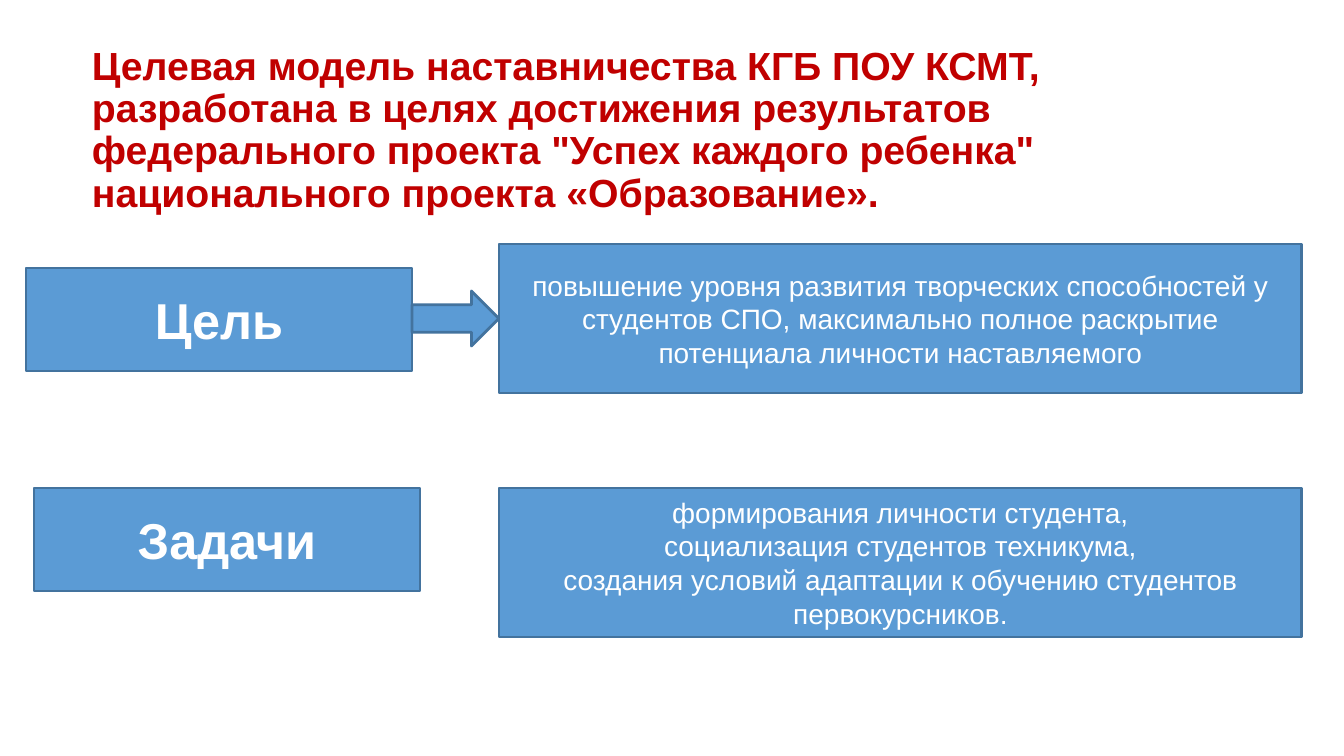
from pptx import Presentation
from pptx.dml.color import RGBColor
from pptx.enum.shapes import MSO_SHAPE
from pptx.enum.text import MSO_ANCHOR, PP_ALIGN
from pptx.util import Emu, Pt

RECT, ARROW = MSO_SHAPE.RECTANGLE, MSO_SHAPE.RIGHT_ARROW
MIDDLE = MSO_ANCHOR.MIDDLE
LEFT, CENTER = PP_ALIGN.LEFT, PP_ALIGN.CENTER
FONT = "Arial"
BLUE, EDGE, WHITE, RED = "5B9BD5", "43739E", "FFFFFF", "C00000"

TITLE = (
    'Целевая модель наставничества КГБ ПОУ КСМТ, разработана в целях '
    'достижения результатов федерального проекта "Успех каждого ребенка" '
    'национального проекта «Образование».'
)
GOAL = [
    "повышение уровня развития творческих способностей у студентов СПО, "
    "максимально полное раскрытие потенциала личности наставляемого",
]
TASKS = [
    "формирования личности студента,",
    "социализация студентов техникума,",
    "создания условий адаптации к обучению студентов первокурсников.",
]


def px(n):
    return Emu(round(n * 914400 / 100.8))


def color(value):
    return RGBColor.from_string(value)


def write(sp, lines, size, ink, bold=False, align=CENTER):
    tf = sp.text_frame
    tf.word_wrap = True
    tf.vertical_anchor = MIDDLE
    for i, line in enumerate(lines):
        p = tf.paragraphs[0] if i == 0 else tf.add_paragraph()
        p.text = line
        p.alignment = align
        p.font.name = FONT
        p.font.size = Pt(size)
        p.font.bold = bold
        p.font.color.rgb = color(ink)


def add_block(s, kind, x, y, w, h):
    sp = s.shapes.add_shape(kind, px(x), px(y), px(w), px(h))
    sp.shadow.inherit = False
    sp.fill.solid()
    sp.fill.fore_color.rgb = color(BLUE)
    sp.line.color.rgb = color(EDGE)
    sp.line.width = Pt(2)
    return sp


def add_title(s, x, y, w, h):
    sp = s.shapes.add_textbox(px(x), px(y), px(w), px(h))
    write(sp, [TITLE], 28, RED, bold=True, align=LEFT)
    sp.text_frame.paragraphs[0].line_spacing = 0.9


def add_row(s, x, y, w, h, label, lines, label_y, arrow=False):
    label_w, label_h, text_w, arrow_h = 386, 103, 803, 55
    text_x = x + w - text_w
    write(add_block(s, RECT, x, y + label_y, label_w, label_h),
          [label], 36, WHITE, bold=True)
    write(add_block(s, RECT, text_x, y, text_w, h), lines, 20, WHITE)
    if arrow:
        arrow_x = x + label_w
        add_block(s, ARROW, arrow_x, y + (h - arrow_h) // 2,
                  text_x - arrow_x, arrow_h)


def main():
    prs = Presentation()
    prs.slide_width, prs.slide_height = px(1344), px(756)
    s = prs.slides.add_slide(prs.slide_layouts[6])
    add_title(s, 82, 95, 1159, 72)
    add_row(s, 26, 244, 1276, 149, "Цель", GOAL, 24, arrow=True)
    add_row(s, 34, 488, 1268, 149, "Задачи", TASKS, 0)
    prs.save("out.pptx")


if __name__ == "__main__":
    main()
